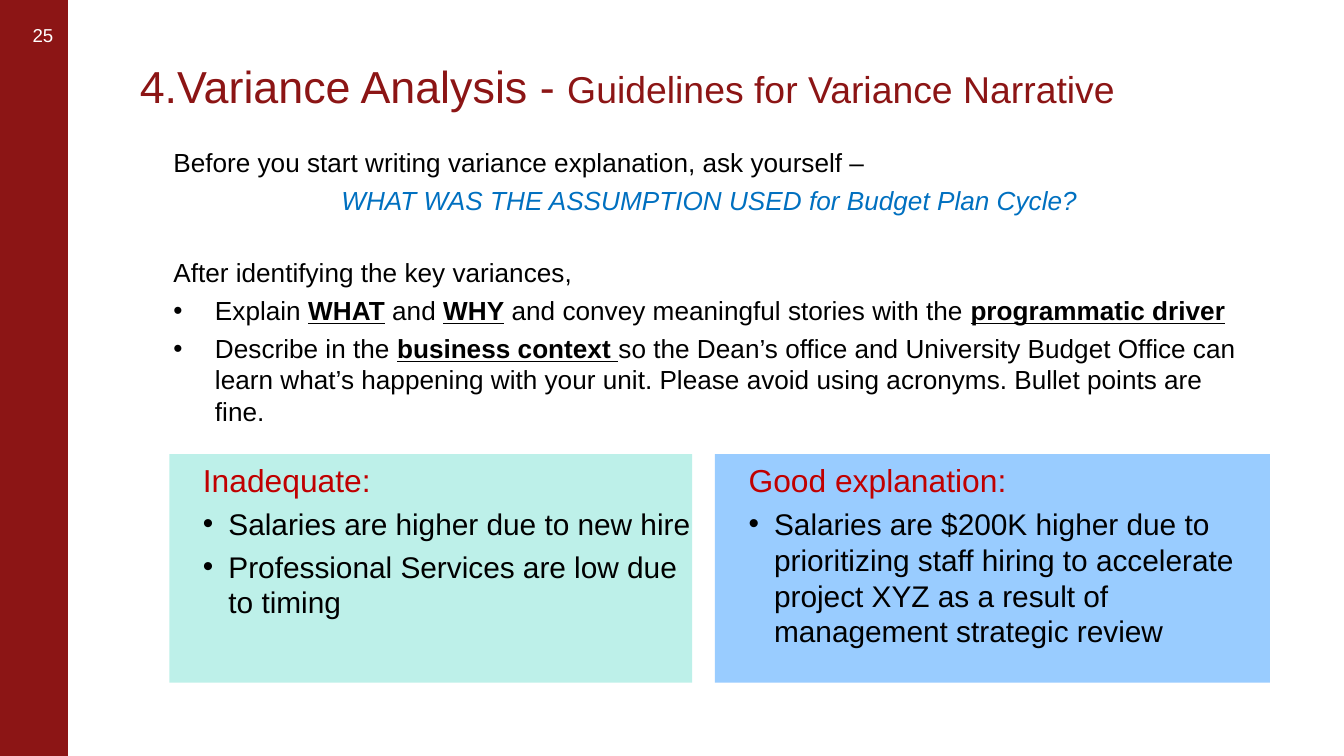
from dataclasses import dataclass

from lxml import etree
from pptx import Presentation
from pptx.dml.color import RGBColor
from pptx.enum import shapes, text
from pptx.oxml import ns
from pptx.util import Inches, Pt


@dataclass(frozen=True)
class Theme:
    font: str = "Arial"
    cardinal: str = "8C1515"
    white: str = "FFFFFF"
    black: str = "000000"
    question: str = "0070C0"
    heading: str = "C00000"
    mint: str = "BDF0E9"
    sky: str = "99CCFF"
    title_size: int = 24
    subtitle_size: int = 20
    heading_size: int = 17
    example_size: int = 16
    body_size: int = 14
    number_size: int = 10


theme = Theme()


def format_run(run, size, color):
    run.font.name = theme.font
    run.font.size = Pt(size)
    run.font.color.rgb = RGBColor.from_string(color)


def write_paragraph(frame, content, size, color, left, hanging=0, before=3.6):
    first = not frame.text
    paragraph = frame.paragraphs[0] if first else frame.add_paragraph()
    paragraph.alignment = text.PP_ALIGN.LEFT
    paragraph.space_before = Pt(0 if first else before)
    properties = paragraph._p.get_or_add_pPr()
    properties.set("marL", str(Inches(left)))
    properties.set("indent", str(-Inches(hanging)))
    if hanging:
        bullet_color = etree.SubElement(properties, ns.qn("a:buClr"))
        etree.SubElement(bullet_color, ns.qn("a:srgbClr"), val=theme.black)
        etree.SubElement(properties, ns.qn("a:buFont"), typeface=theme.font)
        etree.SubElement(properties, ns.qn("a:buChar"), char="•")
    for index, part in enumerate(content.split("*")):
        if part:
            run = paragraph.add_run()
            run.text = part
            format_run(run, size, color)
            if index % 2:
                run.font.bold = run.font.underline = True
    return paragraph


presentation = Presentation()
presentation.slide_width = Inches(10)
presentation.slide_height = Inches(10) * 9 // 16
slide = presentation.slides.add_slide(presentation.slide_layouts[5])

sidebar = slide.shapes.add_shape(
    shapes.MSO_SHAPE.RECTANGLE, 0, 0, Inches(0.5), presentation.slide_height)
sidebar.shadow.inherit = False
sidebar.fill.solid()
sidebar.fill.fore_color.rgb = RGBColor.from_string(theme.cardinal)
sidebar.line.color.rgb = RGBColor.from_string(theme.cardinal)
sidebar.line.width = Pt(0.75)

number = slide.shapes.add_textbox(Inches(0.07), Inches(0.01), Inches(0.5), Inches(0.5))
number_frame = number.text_frame
number_frame.text = "25"
number_frame.word_wrap = True
number_frame.vertical_anchor = text.MSO_ANCHOR.MIDDLE
number_frame.margin_left = number_frame.margin_right = Inches(0.05)
number_frame.margin_top = number_frame.margin_bottom = 0
number_frame.paragraphs[0].alignment = text.PP_ALIGN.CENTER
format_run(number_frame.paragraphs[0].runs[0], theme.number_size, theme.white)

title = slide.shapes.title
title.left, title.top = Inches(1.04), Inches(0.36)
title.width, title.height = Inches(8.43), Inches(0.53)
title_frame = title.text_frame
title_frame.auto_size = text.MSO_AUTO_SIZE.NONE
title_frame.vertical_anchor = text.MSO_ANCHOR.BOTTOM
title_frame.margin_left = 0
title_paragraph = title_frame.paragraphs[0]
title_paragraph.alignment = text.PP_ALIGN.LEFT
title_paragraph.line_spacing = 0.85
for words, size in (
    ("4.Variance Analysis - ", theme.title_size),
    ("Guidelines for Variance Narrative", theme.subtitle_size),
):
    run = title_paragraph.add_run()
    run.text = words
    format_run(run, size, theme.cardinal)

guidelines = slide.shapes.add_textbox(Inches(1.04), Inches(1.04), Inches(8.24), Inches(2.34))
guidelines_frame = guidelines.text_frame
guidelines_frame.word_wrap = True
guidelines_frame.margin_left = guidelines_frame.margin_right = 0
write_paragraph(guidelines_frame, "Before you start writing variance explanation, ask yourself –",
                theme.body_size, theme.black, 0.25)
question = write_paragraph(
    guidelines_frame, "WHAT WAS THE ASSUMPTION USED for Budget Plan Cycle?",
    theme.body_size, theme.question, 1.5)
question.runs[0].font.italic = True
write_paragraph(guidelines_frame, "After identifying the key variances,",
                theme.body_size, theme.black, 0.25, before=21.6)
for advice in (
    "Explain *WHAT* and *WHY* and convey meaningful stories with the *programmatic driver*",
    "Describe in the *business context *so the Dean’s office and University Budget Office can "
    "learn what’s happening with your unit. Please avoid using acronyms. Bullet points are fine.",
):
    write_paragraph(guidelines_frame, advice, theme.body_size, theme.black, 0.56, 0.31)

panels = (
    (1.26, 3.89, theme.mint, "Inadequate:", (
        "Salaries are higher due to new hire",
        "Professional Services are low due to timing",
    )),
    (5.32, 4.13, theme.sky, "Good explanation:", (
        "Salaries are $200K higher due to prioritizing staff hiring to accelerate "
        "project XYZ as a result of management strategic review",
    )),
)
for left, width, fill, heading, examples in panels:
    panel = slide.shapes.add_shape(
        shapes.MSO_SHAPE.RECTANGLE, Inches(left), Inches(3.38), Inches(width), Inches(1.7))
    panel.shadow.inherit = False
    panel.fill.solid()
    panel.fill.fore_color.rgb = RGBColor.from_string(fill)
    panel.line.fill.background()
    panel_frame = panel.text_frame
    panel_frame.word_wrap = True
    panel_frame.vertical_anchor = text.MSO_ANCHOR.TOP
    panel_frame.margin_left = panel_frame.margin_right = 0
    write_paragraph(panel_frame, heading, theme.heading_size, theme.heading, 0.25)
    for example in examples:
        write_paragraph(panel_frame, example, theme.example_size, theme.black, 0.44, 0.19)

presentation.save("out.pptx")
